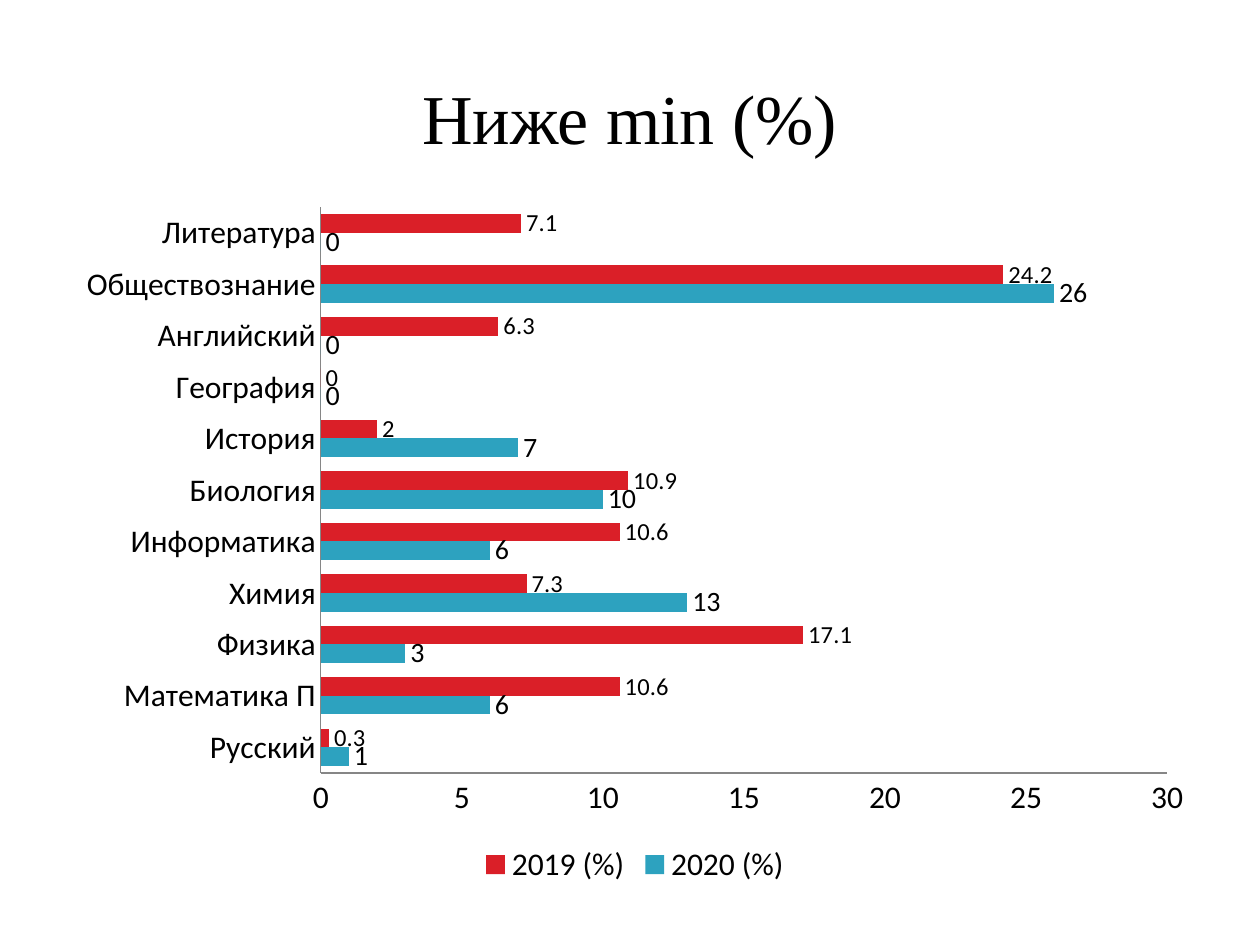
"""Build a slide comparing the share of pupils below the minimum score in 2019 and 2020."""
from dataclasses import dataclass

from pptx import Presentation
from pptx.chart.chart import Chart
from pptx.chart.data import CategoryChartData
from pptx.chart.series import BarSeries
from pptx.dml.color import RGBColor
from pptx.enum.chart import XL_CHART_TYPE, XL_LABEL_POSITION, XL_LEGEND_POSITION, XL_TICK_MARK
from pptx.enum.text import MSO_ANCHOR, PP_ALIGN
from pptx.slide import Slide
from pptx.util import Emu, Pt

PX_PER_INCH = 126
BLACK = RGBColor(0x00, 0x00, 0x00)
GREY = RGBColor(0x86, 0x86, 0x86)
TEAL = RGBColor(0x2D, 0xA2, 0xBF)
RED = RGBColor(0xDA, 0x1F, 0x28)


@dataclass(frozen=True)
class Box:
    left: int
    top: int
    width: int
    height: int

    def emu(self) -> tuple[Emu, ...]:
        return tuple(map(px, (self.left, self.top, self.width, self.height)))


@dataclass(frozen=True)
class YearSeries:
    name: str
    values: tuple[float, ...]
    color: RGBColor
    label_size: int
    number_format: str


SUBJECTS = (
    "Русский", "Математика П", "Физика", "Химия", "Информатика", "Биология",
    "История", "География", "Английский", "Обществознание", "Литература",
)
YEARS = (
    YearSeries("2020 (%)", (1, 6, 3, 13, 6, 10, 7, 0, 0, 26, 0), TEAL, 16, "0"),
    YearSeries("2019 (%)", (0.3, 10.6, 17.1, 7.3, 10.6, 10.9, 2, 0, 6.3, 24.2, 7.1),
               RED, 14, "General"),
)


def px(length: int) -> Emu:
    return Emu(round(length * 914400 / PX_PER_INCH))


def add_title(slide: Slide, box: Box, text: str) -> None:
    text_frame = slide.shapes.add_textbox(*box.emu()).text_frame
    text_frame.word_wrap = True
    text_frame.vertical_anchor = MSO_ANCHOR.MIDDLE
    text_frame.text = text
    paragraph = text_frame.paragraphs[0]
    paragraph.alignment = PP_ALIGN.CENTER
    font = paragraph.runs[0].font
    font.name = "Times New Roman"
    font.size = Pt(40)
    font.color.rgb = BLACK


def format_series(series: BarSeries, year: YearSeries) -> None:
    series.format.fill.solid()
    series.format.fill.fore_color.rgb = year.color
    series.invert_if_negative = False
    labels = series.data_labels
    labels.show_value = True
    labels.position = XL_LABEL_POSITION.OUTSIDE_END
    labels.number_format = year.number_format
    labels.number_format_is_linked = False
    labels.font.size = Pt(year.label_size)
    labels.font.color.rgb = BLACK


def format_axes(chart: Chart) -> None:
    for axis in (chart.category_axis, chart.value_axis):
        axis.major_tick_mark = XL_TICK_MARK.NONE
        axis.minor_tick_mark = XL_TICK_MARK.NONE
        axis.has_major_gridlines = False
        axis.format.line.color.rgb = GREY
        axis.format.line.width = Pt(0.75)
    value_axis = chart.value_axis
    value_axis.minimum_scale = 0
    value_axis.maximum_scale = 30
    value_axis.major_unit = 5
    value_axis.tick_labels.number_format = "0"
    value_axis.tick_labels.number_format_is_linked = False


def add_bar_chart(slide: Slide, box: Box) -> None:
    data = CategoryChartData()
    data.categories = SUBJECTS
    for year in YEARS:
        data.add_series(year.name, year.values)
    chart = slide.shapes.add_chart(XL_CHART_TYPE.BAR_CLUSTERED, *box.emu(), data).chart
    chart.has_title = False
    chart.font.name = "Calibri"
    chart.font.size = Pt(18)
    chart.font.color.rgb = BLACK
    chart.has_legend = True
    chart.legend.position = XL_LEGEND_POSITION.BOTTOM
    chart.legend.include_in_layout = False
    plot = chart.plots[0]
    plot.gap_width = 75
    plot.vary_by_categories = False
    for series, year in zip(plot.series, YEARS):
        format_series(series, year)
    format_axes(chart)


def main() -> None:
    presentation = Presentation()
    presentation.slide_width = px(1260)
    presentation.slide_height = px(945)
    slide = presentation.slides.add_slide(presentation.slide_layouts[6])
    add_title(slide, Box(63, 38, 1134, 158), "Ниже min (%)")
    add_bar_chart(slide, Box(64, 193, 1142, 697))
    presentation.save("out.pptx")


if __name__ == "__main__":
    main()
